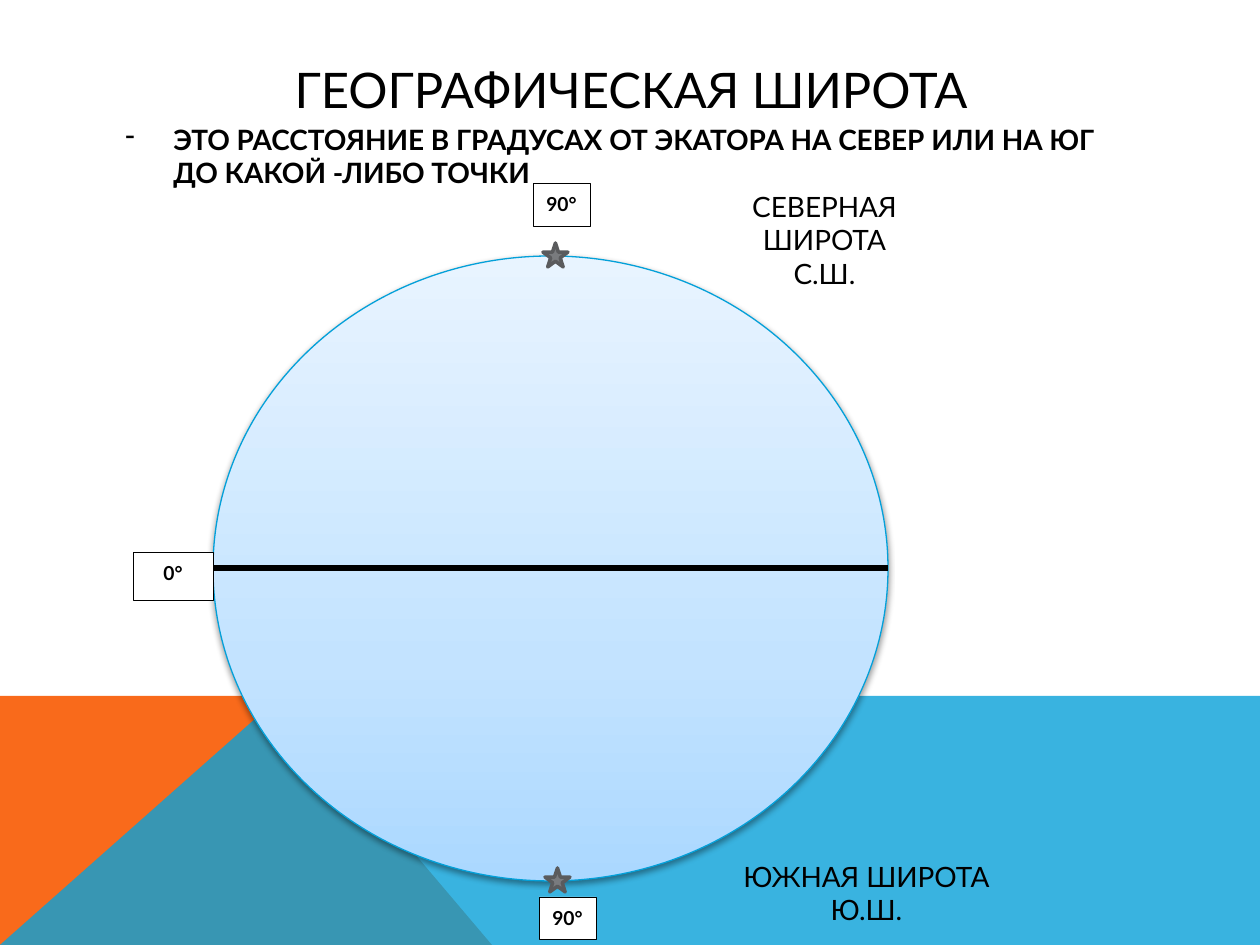
from copy import deepcopy

from lxml import etree
from pptx import Presentation, util as u
from pptx.dml.color import RGBColor
from pptx.enum import shapes, text
from pptx.oxml import ns

BLACK = RGBColor(0x00, 0x00, 0x00)
WHITE = RGBColor(0xFF, 0xFF, 0xFF)
ORANGE = RGBColor(0xF9, 0x6A, 0x1B)
BLUE = RGBColor(0x08, 0xA1, 0xD9)
GLOBE_EDGE = RGBColor(0x03, 0xA0, 0xD9)
GLOBE_STOPS = [
    (0, RGBColor(0xAB, 0xD8, 0xFF)),
    (0.35, RGBColor(0xC3, 0xE3, 0xFF)),
    (1, RGBColor(0xE8, 0xF4, 0xFF)),
]
STAR_FILL = RGBColor(0x79, 0x7B, 0x7E)
STAR_EDGE = RGBColor(0x5A, 0x5B, 0x5D)


class SlideBuilder:
    font = "Lato"
    scale = 914400 / 126

    def __init__(self, page):
        self.page = page

    def emu(self, *lengths):
        return [round(length * self.scale) for length in lengths]

    def add_xml(self, parent, tag, **attributes):
        return etree.SubElement(parent, ns.qn(tag), attributes)

    def paint(self, shape, fill, edge=None, width=0):
        shape.shadow.inherit = False
        shape.fill.solid()
        shape.fill.fore_color.rgb = fill
        if edge is None:
            shape.line.fill.background()
        else:
            shape.line.color.rgb = edge
            shape.line.width = u.Pt(width)

    def set_text(self, box, lines, size, bold=False, align=text.PP_ALIGN.CENTER):
        frame = box.text_frame
        frame.word_wrap = True
        frame.text = "\n".join(lines)
        for para in frame.paragraphs:
            para.alignment = align
            for span in para.runs:
                span.font.name = self.font
                span.font.size = u.Pt(size)
                span.font.bold = bold
                span.font.color.rgb = BLACK
        return frame

    def preset(self, kind, bounds, fill, edge, width):
        shape = self.page.shapes.add_shape(kind, *self.emu(*bounds))
        self.paint(shape, fill, edge, width)
        return shape

    def band(self, points, fill, opacity=100):
        builder = self.page.shapes.build_freeform(*points[0], scale=self.scale)
        builder.add_line_segments(points[1:], close=True)
        shape = builder.convert_to_shape()
        self.paint(shape, fill)
        if opacity < 100:
            color = shape.element.spPr.find(".//" + ns.qn("a:srgbClr"))
            self.add_xml(color, "a:alpha", val=str(opacity * 1000))

    def text_box(self, bounds, lines, size, **style):
        box = self.page.shapes.add_textbox(*self.emu(*bounds))
        return self.set_text(box, lines, size, **style)

    def definition(self, bounds, line):
        frame = self.text_box(bounds, [line], 16, bold=True, align=text.PP_ALIGN.LEFT)
        para = frame.paragraphs[0]
        para.space_before = u.Pt(8)
        indent = self.emu(48)[0]
        properties = para._p.get_or_add_pPr()
        properties.set("marL", str(indent))
        properties.set("indent", str(-indent))
        self.add_xml(properties, "a:buChar", char="-")

    def degree_label(self, bounds, line):
        box = self.preset(shapes.MSO_SHAPE.RECTANGLE, bounds, WHITE, BLACK, 0.5)
        frame = self.set_text(box, [line], 11, bold=True)
        frame.vertical_anchor = text.MSO_ANCHOR.TOP
        para = frame.paragraphs[0]
        para.line_spacing = 1.15
        para.space_after = u.Pt(10)

    def globe(self, bounds):
        shape = self.preset(shapes.MSO_SHAPE.OVAL, bounds, WHITE, GLOBE_EDGE, 0.75)
        shape.fill.gradient()
        shape.fill.gradient_angle = 90
        properties = shape.element.spPr
        stops = properties.find(".//" + ns.qn("a:gsLst"))
        stops.append(deepcopy(stops[0]))
        for stop, (position, color) in zip(shape.fill.gradient_stops, GLOBE_STOPS):
            stop.position = position
            stop.color.rgb = color
        shadow = self.add_xml(
            properties.find(ns.qn("a:effectLst")), "a:outerShdw",
            blurRad=str(u.Pt(3.1)), dist=str(u.Pt(1.6)), dir="5400000", rotWithShape="0")
        color = self.add_xml(shadow, "a:srgbClr", val=str(BLACK))
        self.add_xml(color, "a:alpha", val="38000")

    def line(self, start, end, width):
        connector = self.page.shapes.add_connector(
            shapes.MSO_CONNECTOR.STRAIGHT, *self.emu(*start, *end))
        connector.line.color.rgb = BLACK
        connector.line.width = u.Pt(width)
        self.add_xml(connector.element.spPr, "a:effectLst")

    def star(self, left, top):
        self.preset(shapes.MSO_SHAPE.STAR_5_POINT, (left, top, 25, 24), STAR_FILL, STAR_EDGE, 2)


def main():
    deck = Presentation()
    deck.slide_width, deck.slide_height = u.Inches(10), u.Inches(7.5)
    slide = SlideBuilder(deck.slides.add_slide(deck.slide_layouts[6]))

    slide.band([(0, 945), (0, 696), (281, 696), (492, 945)], ORANGE)
    slide.band([(0, 945), (281, 696), (1260, 696), (1260, 945)], BLUE, opacity=80)

    title = slide.text_box((113, 51, 1036, 75), ["ГЕОГРАФИЧЕСКАЯ ШИРОТА"], 28)
    title.vertical_anchor = text.MSO_ANCHOR.MIDDLE
    slide.definition(
        (113, 116, 1036, 774),
        "ЭТО РАССТОЯНИЕ В ГРАДУСАХ ОТ ЭКАТОРА НА СЕВЕР ИЛИ НА ЮГ ДО КАКОЙ -ЛИБО ТОЧКИ")

    slide.globe((213, 256, 675, 625))
    slide.line((213, 568), (888, 568), 3.5)
    slide.star(543, 243)
    slide.star(545, 868)

    slide.degree_label((533, 183, 57, 43), "90°")
    slide.text_box((679, 183, 291, 81), ["СЕВЕРНАЯ ШИРОТА", "С.Ш."], 16)
    slide.degree_label((539, 897, 57, 43), "90°")
    slide.text_box((721, 853, 291, 81), ["ЮЖНАЯ ШИРОТА", "Ю.Ш."], 16)
    slide.degree_label((133, 552, 80, 49), "0°")

    deck.save("out.pptx")


if __name__ == "__main__":
    main()
